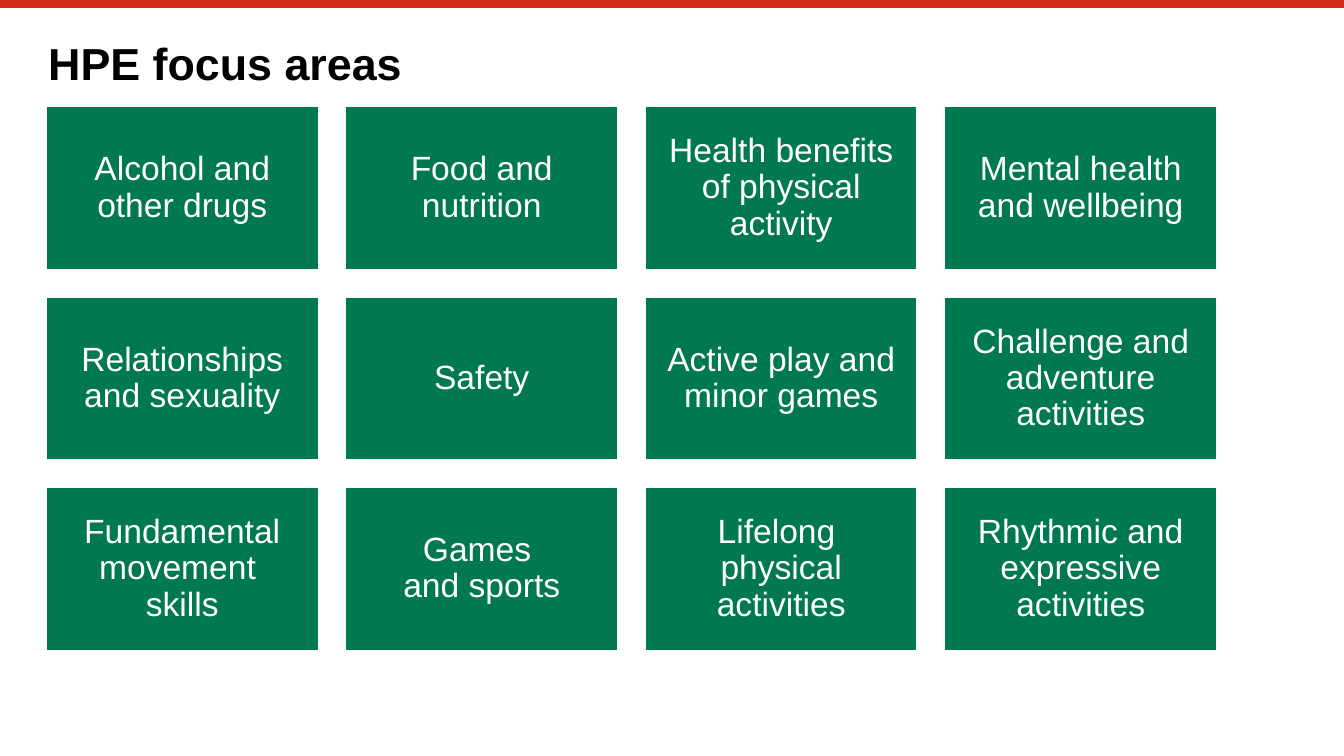
from dataclasses import dataclass

from pptx import Presentation
from pptx import util as u
from pptx.dml.color import RGBColor
from pptx.enum import shapes, text
from pptx.oxml.ns import qn
from lxml import etree

HEADING = "HPE focus areas"
FOCUS_AREAS = [
    ["Alcohol and other drugs", "Food and nutrition",
     "Health benefits of physical activity", "Mental health and wellbeing"],
    ["Relationships and sexuality", "Safety",
     "Active play and minor games", "Challenge and adventure activities"],
    ["Fundamental movement \nskills", "Games \nand sports",
     "Lifelong \nphysical activities", "Rhythmic and expressive activities"],
]


@dataclass(frozen=True)
class Theme:
    font: str = "Arial"
    heading_size: float = 24
    area_size: float = 18
    line_spacing: float = 0.9
    black: RGBColor = RGBColor(0x00, 0x00, 0x00)
    white: RGBColor = RGBColor(0xFF, 0xFF, 0xFF)
    green: RGBColor = RGBColor(0x00, 0x78, 0x52)
    red: RGBColor = RGBColor(0xD5, 0x2B, 0x1E)


THEME = Theme()
SLIDE_W, SLIDE_H = 25.4, 14.29
GRID_LEFT, GRID_TOP = 0.87, 2.01
AREA_W, AREA_H, GAP = 5.15, 3.09, 0.51


def write(frame, wording, size, color, align, inset, bold=False):
    frame.word_wrap = True
    frame.auto_size = text.MSO_AUTO_SIZE.NONE
    frame.vertical_anchor = text.MSO_ANCHOR.MIDDLE
    frame.margin_left = frame.margin_right = u.Cm(inset)
    frame.margin_top = frame.margin_bottom = u.Cm(inset)
    paragraph = frame.paragraphs[0]
    paragraph.alignment = align
    paragraph.line_spacing = THEME.line_spacing
    for number, part in enumerate(wording.split("\n")):
        if number:
            paragraph.add_line_break()
        run = paragraph.add_run()
        run.text = part
        run.font.name = THEME.font
        run.font.size = u.Pt(size)
        run.font.bold = bold
        run.font.color.rgb = color


def add_top_rule(slide):
    rule = slide.shapes.add_connector(
        shapes.MSO_CONNECTOR.STRAIGHT, 0, u.Cm(0.08), u.Cm(SLIDE_W), u.Cm(0.08))
    rule.line.color.rgb = THEME.red
    rule.line.width = u.Pt(4.2)
    etree.SubElement(rule._element.spPr, qn("a:effectLst"))


def add_heading(slide):
    heading = slide.shapes.title
    heading.left, heading.top = u.Cm(0.91), u.Cm(0.76)
    heading.width, heading.height = u.Cm(23.6), u.Cm(0.99)
    write(heading.text_frame, HEADING, THEME.heading_size, THEME.black,
          text.PP_ALIGN.LEFT, 0, bold=True)


def add_focus_area(slide, row, column, wording):
    area = slide.shapes.add_shape(
        shapes.MSO_SHAPE.RECTANGLE,
        u.Cm(GRID_LEFT + column * (AREA_W + GAP)),
        u.Cm(GRID_TOP + row * (AREA_H + GAP)),
        u.Cm(AREA_W), u.Cm(AREA_H))
    area.shadow.inherit = False
    area.fill.solid()
    area.fill.fore_color.rgb = THEME.green
    area.line.color.rgb = THEME.white
    area.line.width = u.Pt(1)
    write(area.text_frame, wording, THEME.area_size, THEME.white,
          text.PP_ALIGN.CENTER, 0.18)


def main():
    deck = Presentation()
    deck.slide_width, deck.slide_height = u.Cm(SLIDE_W), u.Cm(SLIDE_H)
    slide = deck.slides.add_slide(deck.slide_layouts.get_by_name("Title Only"))
    add_top_rule(slide)
    add_heading(slide)
    for row, areas in enumerate(FOCUS_AREAS):
        for column, wording in enumerate(areas):
            add_focus_area(slide, row, column, wording)
    deck.save("out.pptx")


if __name__ == "__main__":
    main()
